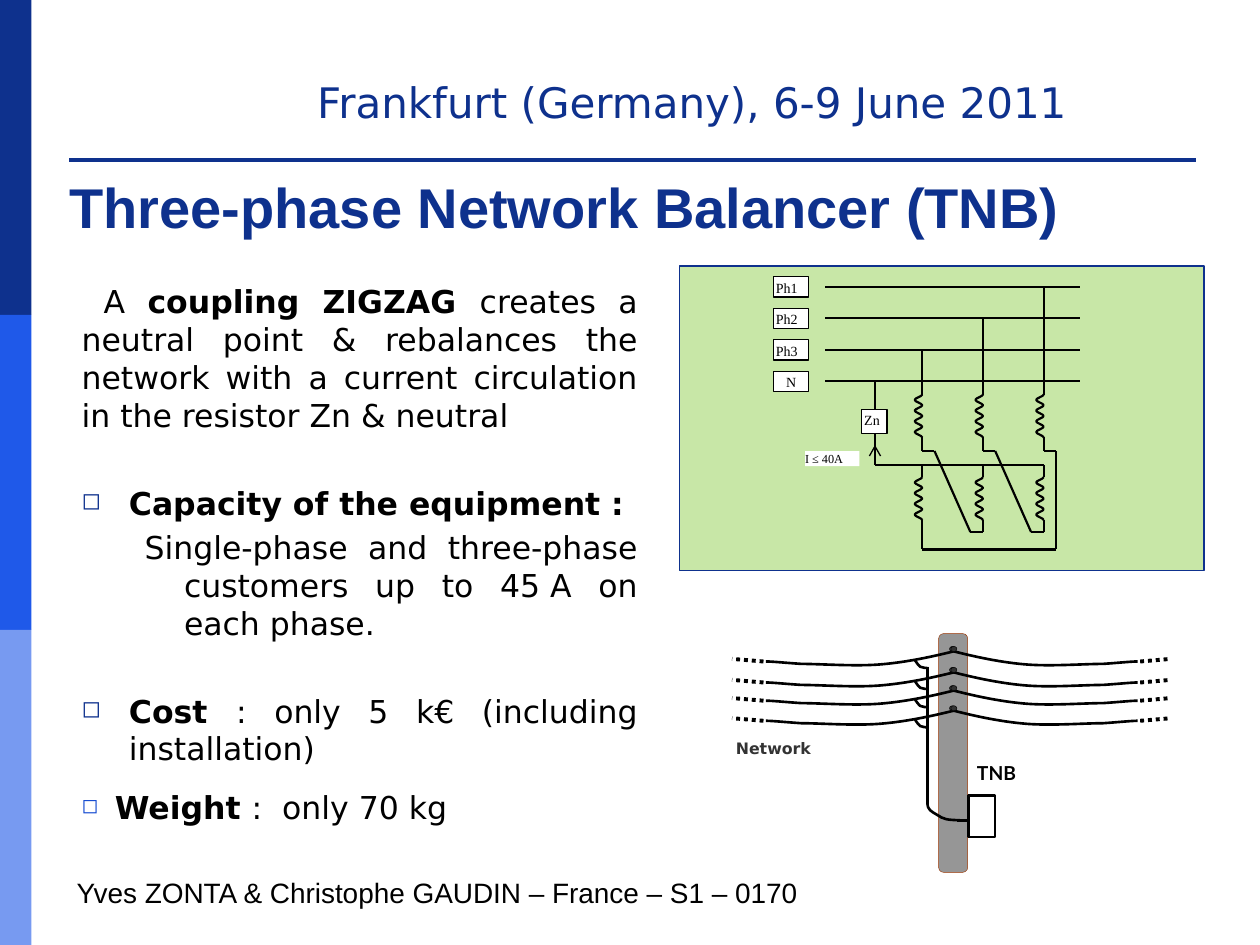
"""Build the Three-phase Network Balancer slide."""
import pptx
import pptx.util
from lxml import etree
from pptx.dml.color import RGBColor
from pptx.enum.dml import MSO_LINE
from pptx.enum.shapes import MSO_CONNECTOR, MSO_SHAPE
from pptx.enum.text import MSO_ANCHOR, PP_ALIGN
from pptx.oxml.ns import qn

Pt = pptx.util.Pt
NAVY = RGBColor(0x0E, 0x31, 0x8D)
BLUE = RGBColor(0x1F, 0x59, 0xE9)
SKY = RGBColor(0x77, 0x9A, 0xF1)
BULLET = RGBColor(0x15, 0x4B, 0xD1)
GREEN = RGBColor(0x92, 0xD0, 0x50)
GREY = RGBColor(0x96, 0x96, 0x96)
DARK = RGBColor(0x33, 0x33, 0x33)
BROWN = RGBColor(0x99, 0x33, 0x00)
BLACK = RGBColor(0, 0, 0)
WHITE = RGBColor(0xFF, 0xFF, 0xFF)

SANS, SERIF = "DejaVu Sans", "Times New Roman"
NBSP = chr(160)
DATE = "Frankfurt (Germany), 6-9 June 2011"
TITLE = "Three-phase Network Balancer (TNB)"
AUTHORS = "Yves ZONTA & Christophe GAUDIN – France – S1 – 0170"
J = PP_ALIGN.JUSTIFY
BODY = [
    dict(runs=[("A ", False), ("coupling ZIGZAG ", True),
               ("creates a neutral point & rebalances the network with a current "
                "circulation in the resistor Zn & neutral", False)],
         align=J, before=0, indent=(0, 12.5)),
    dict(runs=[("Capacity of the equipment :", True)],
         align=J, before=29, indent=(27, -27), bullet=(NAVY, 75)),
    dict(runs=[(f"Single-phase and three-phase customers up to 45{NBSP}A on each phase.",
                False)],
         align=J, before=3.6, indent=(58.5, -22.5)),
    dict(runs=[("Cost ", True), (": only 5 k€ (including installation)", False)],
         align=J, before=28.6, indent=(27, -27), bullet=(NAVY, 75)),
    dict(runs=[("Weight ", True), (":  only 70 kg", False)],
         align=PP_ALIGN.LEFT, before=12, indent=(19, -19), bullet=(BULLET, 65)),
]
PHASES = ["Ph1", "Ph2", "Ph3", "N"]
ROWS = [163.8 + 18 * i for i in range(4)]
COLS = [527 + 34.7 * i for i in range(3)]
COIL_TOPS, COIL_H, COIL_W = (225.5, 272.7), 24.5, 4.3
JOG, STAR, LOW, RETURN = 257.7, 265.7, 304, 314
NEUTRAL_X, RETURN_X = 500, 603.4

POLE_X = 545
CABLES = [372.2, 384.2, 394.6, 406.1]
SAG = [(0, 0), (14.4, 3.6), (28.8, 6.5), (43.2, 7.6), (57.6, 8.6), (76.3, 7.2),
       (87.1, 7.2), (97.2, 6.5), (103.7, 5.8), (107.3, 5.8)]
TAP = [(0, 0), (0.7, 1.4), (2.2, 2.9), (2.9, 3.6), (4.3, 4.3), (6.5, 4.3), (7, 4.3)]
DOWN_LEAD = [(530, 458.6), (530, 463), (532, 463.5), (535.7, 465.8),
             (539, 468), (541, 468.7), (548.6, 468.7)]

prs = pptx.Presentation()
prs.slide_width, prs.slide_height = Pt(720), Pt(540)
s = prs.slides.add_slide(prs.slide_layouts[6])


def outline(sp, color, width):
    if color is None:
        sp.line.fill.background()
    else:
        sp.line.color.rgb = color
        sp.line.width = Pt(width)


def box(x, y, w, h, fill, line=None, width=0.75, kind=MSO_SHAPE.RECTANGLE):
    sp = s.shapes.add_shape(kind, Pt(x), Pt(y), Pt(w), Pt(h))
    sp.shadow.inherit = False
    sp.fill.solid()
    sp.fill.fore_color.rgb = fill
    outline(sp, line, width)
    return sp


def wire(x1, y1, x2, y2, width=1.25, dash=None):
    sp = s.shapes.add_connector(MSO_CONNECTOR.STRAIGHT, Pt(x1), Pt(y1), Pt(x2), Pt(y2))
    outline(sp, BLACK, width)
    sp.line.dash_style = dash
    etree.SubElement(sp._element.spPr, qn("a:effectLst"))


def curve(points, width):
    emu = [(Pt(x), Pt(y)) for x, y in points]
    fb = s.shapes.build_freeform(*emu[0])
    fb.add_line_segments(emu[1:], close=False)
    sp = fb.convert_to_shape()
    sp.shadow.inherit = False
    sp.fill.background()
    outline(sp, BLACK, width)
    steps = list(sp._element.iter(qn("a:lnTo")))
    for i in range(0, len(steps), 3):
        steps[i].addprevious(cubic := etree.Element(qn("a:cubicBezTo")))
        for step in steps[i:i + 3]:
            cubic.append(step[0])
            step.getparent().remove(step)


def coil(x, y, turns=8):
    step = COIL_H / turns
    points = [(x, y)]
    for i in range(turns):
        here, there = (x - COIL_W * (k % 2) for k in (i, i + 1))
        top = y + step * i
        points += [(here, top + step / 3), (there, top + step * 2 / 3), (there, top + step)]
    curve(points, 1.25)


def style(font, color, **values):
    for name, value in values.items():
        setattr(font, name, value)
    font.color.rgb = color


def frame(sp, inset=None, anchor=MSO_ANCHOR.TOP):
    tf = sp.text_frame
    tf.word_wrap = True
    tf.vertical_anchor = anchor
    if inset is not None:
        for side in ("left", "top", "right", "bottom"):
            setattr(tf, "margin_" + side, Pt(inset))
    return tf


def write(sp, text, color, size, name, bold=False, align=PP_ALIGN.LEFT, **kw):
    p = frame(sp, **kw).paragraphs[0]
    p.alignment = align
    r = p.add_run()
    r.text = text
    style(r.font, color, size=Pt(size), name=name, bold=bold)


def textbox(x, y, w, h):
    return s.shapes.add_textbox(Pt(x), Pt(y), Pt(w), Pt(h))


def add_rule():
    table = s.shapes.add_table(1, 1, Pt(38.9), Pt(77), Pt(645.2), Pt(14.4)).table
    table.first_row = table.horz_banding = False
    cell = table.cell(0, 0)
    cell.margin_top = cell.margin_bottom = 0
    cell.fill.background()
    etree.SubElement(cell.text_frame.paragraphs[0]._p, qn("a:endParaRPr"), sz="800")
    border = etree.Element(qn("a:lnB"), w=str(Pt(2.25)))
    fill = etree.SubElement(border, qn("a:solidFill"))
    etree.SubElement(fill, qn("a:srgbClr"), val=str(NAVY))
    cell._tc.get_or_add_tcPr().insert(0, border)


def add_body():
    tf = frame(textbox(39.6, 157.7, 332, 336))
    for i, item in enumerate(BODY):
        p = tf.paragraphs[0] if i == 0 else tf.add_paragraph()
        pPr = p._p.get_or_add_pPr()
        for key, value in zip(("marL", "indent"), item["indent"]):
            pPr.set(key, str(Pt(value)))
        if "bullet" in item:
            color, percent = item["bullet"]
            clr = etree.SubElement(pPr, qn("a:buClr"))
            etree.SubElement(clr, qn("a:srgbClr"), val=str(color))
            etree.SubElement(pPr, qn("a:buSzPct"), val=str(percent * 1000))
            etree.SubElement(pPr, qn("a:buChar"), char="◻")
        p.alignment, p.space_before = item["align"], Pt(item["before"])
        for text, bold in item["runs"]:
            r = p.add_run()
            r.text = text
            style(r.font, BLACK, size=Pt(18), name=SANS, bold=bold)


def add_circuit():
    panel = box(388.1, 152, 300, 174.2, GREEN, NAVY)
    clr = panel._element.spPr.find(qn("a:solidFill")).find(qn("a:srgbClr"))
    etree.SubElement(clr, qn("a:alpha"), val="50000")
    for label, y in zip(PHASES, ROWS):
        wire(471.5, y, 617, y)
        write(box(442, y - 5.6, 20.2, 11.5, WHITE, BLACK), label, BLACK, 8, SERIF, inset=1.4,
              align=PP_ALIGN.CENTER if label == "N" else PP_ALIGN.LEFT)
    for i, x in enumerate(COLS):
        for top in COIL_TOPS:
            coil(x, top)
        upper, lower = (top + COIL_H for top in COIL_TOPS)
        for y1, y2 in ((ROWS[2 - i], COIL_TOPS[0]), (upper, JOG), (STAR, COIL_TOPS[1]),
                       (lower, LOW if i else RETURN)):
            wire(x, y1, x, y2)
        wire(x, JOG, x + 7, JOG)
    for x, following in zip(COLS, COLS[1:]):
        wire(x + 7, JOG, x + 27.5, LOW)
        wire(x + 27.5, LOW, following, LOW)
    wire(RETURN_X, JOG, RETURN_X, RETURN)
    wire(COLS[0], RETURN, RETURN_X, RETURN)
    wire(COLS[2], STAR, NEUTRAL_X, STAR)
    wire(NEUTRAL_X, STAR, NEUTRAL_X, 247.7)
    wire(NEUTRAL_X, 234, NEUTRAL_X, ROWS[3])
    for dx in (-3.2, 3.2):
        wire(NEUTRAL_X, 255, NEUTRAL_X + dx, 260.6, 0.75)
    write(box(492.5, 234, 14.4, 13.7, WHITE, BLACK), "Zn", BLACK, 8, SERIF, inset=1.4)
    write(box(460.1, 257.8, 31, 8.6, WHITE), "I ≤ 40A", BLACK, 7, SERIF, inset=0)


def add_pole():
    pole = box(536.4, 362.1, 16.6, 136.4, GREY, BROWN, 0.25, MSO_SHAPE.ROUNDED_RECTANGLE)
    pole.adjustments[0] = 0.17
    for y in CABLES:
        for side in (-1, 0.98):
            curve([(POLE_X + side * dx, y + dy) for dx, dy in SAG], 1.5)
            wire(POLE_X + side * 108.7, y + 5.8, POLE_X + side * 126.7, y + 4.3, 2.25,
                 MSO_LINE.ROUND_DOT)
            box(543 + 0.4 * side, y - 2.8, 3.4, 2.9, DARK, BLACK, 0.25, MSO_SHAPE.OVAL)
        curve([(522.9 + dx, y + 5.2 + dy) for dx, dy in TAP], 1.5)
    box(553.5, 454.5, 15.1, 23.8, WHITE, BLACK, 1.5)
    wire(530, 381, 530, 459.4, 1.5)
    curve(DOWN_LEAD, 1.5)
    wire(547, 468.7, 552.5, 468.7, 1.5)
    write(box(557.3, 434.2, 35.3, 13.7, WHITE), "TNB", BLACK, 11, "Lato", True, inset=1)
    write(box(420.5, 422, 49.7, 15, WHITE), "Network", DARK, 9, SANS, True, inset=0)


for i, color in enumerate((NAVY, BLUE, SKY)):
    box(0, 180 * i, 18, 180, color)
add_rule()
write(textbox(174.2, 40.3, 473.8, 36), DATE, NAVY, 24, SANS)
write(textbox(32.6, 94.3, 648, 46.8), TITLE, NAVY, 32, "Arial", True, anchor=MSO_ANCHOR.MIDDLE)
add_body()
write(textbox(36.7, 496.8, 567.4, 26.6), AUTHORS, BLACK, 16, "Arial")
add_circuit()
add_pole()
prs.save("out.pptx")
